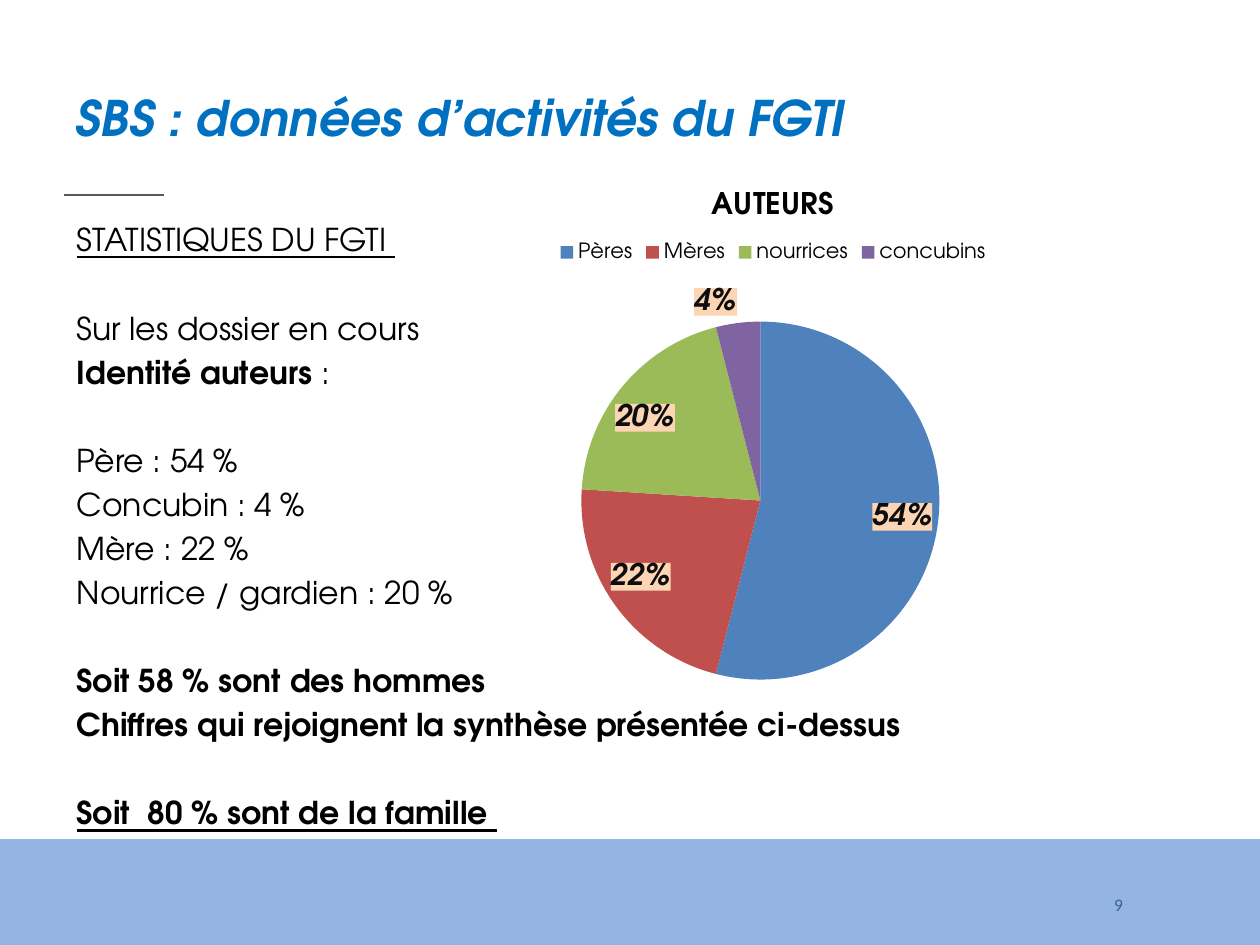
from lxml import etree
from pptx import Presentation
from pptx.chart.data import CategoryChartData
from pptx.dml.color import RGBColor
from pptx.enum.chart import XL_CHART_TYPE, XL_LABEL_POSITION, XL_LEGEND_POSITION
from pptx.enum.shapes import MSO_CONNECTOR, MSO_SHAPE
from pptx.enum.text import MSO_ANCHOR, PP_ALIGN
from pptx.oxml import parse_xml
from pptx.oxml.ns import nsdecls, qn
from pptx.util import Inches, Pt

PIE, STRAIGHT, RECTANGLE = XL_CHART_TYPE.PIE, MSO_CONNECTOR.STRAIGHT, MSO_SHAPE.RECTANGLE
BEST_FIT, LEGEND_TOP = XL_LABEL_POSITION.BEST_FIT, XL_LEGEND_POSITION.TOP
MIDDLE, LEFT, RIGHT = MSO_ANCHOR.MIDDLE, PP_ALIGN.LEFT, PP_ALIGN.RIGHT

BLACK = RGBColor(0x00, 0x00, 0x00)
LABEL_TEXT = RGBColor(0x0D, 0x0D, 0x0D)
LABEL_FILL = RGBColor(0xFC, 0xD5, 0xB5)
TITLE_BLUE = RGBColor(0x00, 0x70, 0xC0)
NUMBER_BLUE = RGBColor(0x37, 0x60, 0x92)
BAND_BLUE = RGBColor(0x94, 0xB4, 0xE3)
RULE_GREY = RGBColor(0x59, 0x59, 0x59)
HEADING_FONT = "TeX Gyre Adventor"

LINE_GAP = 3.6
SECTION_GAP = 28.75  # one empty line plus the usual gap


def format_font(font, color, **values):
    for name, value in values.items():
        setattr(font, name, value)
    font.color.rgb = color


presentation = Presentation()
presentation.slide_width, presentation.slide_height = Inches(10), Inches(7.5)
slide = presentation.slides.add_slide(presentation.slide_layouts[5])

# Footer band and short rule
band = slide.shapes.add_shape(RECTANGLE, Inches(0), Inches(6.66), Inches(10), Inches(0.84))
band.shadow.inherit = False
band.fill.solid()
band.fill.fore_color.rgb = BAND_BLUE
band.line.fill.background()

rule = slide.shapes.add_connector(STRAIGHT, Inches(0.51), Inches(1.55), Inches(1.3), Inches(1.55))
rule.line.color.rgb = RULE_GREY
rule.line.width = Pt(1)
etree.SubElement(rule._element.spPr, qn("a:effectLst"))

# Title
title = slide.shapes.title
title.left, title.top, title.width, title.height = Inches(0.5), Inches(0.3), Inches(9), Inches(1.25)
title.text_frame.text = "SBS : données d’activités du FGTI"
title.text_frame.vertical_anchor = MIDDLE
paragraph = title.text_frame.paragraphs[0]
paragraph.alignment = LEFT
format_font(paragraph.runs[0].font, TITLE_BLUE, name=HEADING_FONT, size=Pt(28), bold=True, italic=True)

# Slide number
number_box = slide.shapes.add_textbox(Inches(6.68), Inches(6.98), Inches(2.33), Inches(0.4))
number_box.text_frame.word_wrap = True
number_box.text_frame.vertical_anchor = MIDDLE
paragraph = number_box.text_frame.paragraphs[0]
paragraph.alignment = RIGHT
run = paragraph.add_run()
run.text = "9"
format_font(run.font, NUMBER_BLUE, name="Calibri", size=Pt(10))

# Statistics: sections of lines, each line a list of (text, format) runs
PLAIN, BOLD = {}, {"bold": True}
sections = [
    [[("STATISTIQUES DU FGTI ", {"underline": True})]],
    [[("Sur les dossier en cours", PLAIN)], [("Identité auteurs ", BOLD), (":", PLAIN)]],
    [
        [("Père : 54 %", PLAIN)],
        [("Concubin : 4 %", PLAIN)],
        [("Mère : 22 %", PLAIN)],
        [("Nourrice / gardien : 20 %", PLAIN)],
    ],
    [
        [("Soit 58 % sont des hommes", BOLD)],
        [("Chiffres qui rejoignent la synthèse présentée ci-dessus", BOLD)],
    ],
    [[("Soit  80 % sont de la famille ", {"bold": True, "underline": True})]],
]
statistics_box = slide.shapes.add_textbox(Inches(0.51), Inches(1.7), Inches(9), Inches(4.95))
text_frame = statistics_box.text_frame
text_frame.word_wrap = True
for section_index, section in enumerate(sections):
    for line_index, line in enumerate(section):
        if section_index == line_index == 0:
            paragraph = text_frame.paragraphs[0]
        else:
            paragraph = text_frame.add_paragraph()
            paragraph.space_before = Pt(LINE_GAP if line_index else SECTION_GAP)
        for text, values in line:
            run = paragraph.add_run()
            run.text = text
            format_font(run.font, BLACK, name=HEADING_FONT, size=Pt(18), **values)

# Pie chart of the authors
slices = [
    ("Pères", 54, RGBColor(0x4F, 0x81, 0xBD)),
    ("Mères", 22, RGBColor(0xC0, 0x50, 0x4D)),
    ("nourrices", 20, RGBColor(0x9B, 0xBB, 0x59)),
    ("concubins", 4, RGBColor(0x80, 0x64, 0xA2)),
]
chart_data = CategoryChartData()
chart_data.categories = [name for name, _, _ in slices]
chart_data.add_series("AUTEURS", [value for _, value, _ in slices])
chart = slide.shapes.add_chart(
    PIE, Inches(2.8), Inches(1.31), Inches(6.67), Inches(4.44), chart_data
).chart
format_font(chart.font, BLACK, name="Calibri", size=Pt(18))

chart.has_title = True
chart.chart_title.include_in_layout = False
chart.chart_title.text_frame.text = "AUTEURS"
title_run = chart.chart_title.text_frame.paragraphs[0].runs[0]
format_font(title_run.font, BLACK, name=HEADING_FONT, size=Pt(17), bold=True)

chart.has_legend = True
chart.legend.position = LEGEND_TOP
chart.legend.include_in_layout = False
format_font(chart.legend.font, BLACK, name=HEADING_FONT, size=Pt(12))

plot = chart.plots[0]
plot.vary_by_categories = True
for index, (_, _, color) in enumerate(slices):
    fill = plot.series[0].points[index].format.fill
    fill.solid()
    fill.fore_color.rgb = color

labels = plot.series[0].data_labels
label_settings = {
    "show_percentage": True,
    "show_value": False,
    "number_format": "0%",
    "number_format_is_linked": False,
    "position": BEST_FIT,
}
for name, value in label_settings.items():
    setattr(labels, name, value)
format_font(labels.font, LABEL_TEXT, name=HEADING_FONT, size=Pt(17), bold=True, italic=True)
labels._element.find(qn("c:numFmt")).addnext(parse_xml(
    f'<c:spPr {nsdecls("c", "a")}><a:solidFill><a:srgbClr val="{LABEL_FILL}"/></a:solidFill></c:spPr>'
))

# Fixed inner plot area, as fractions of the chart
plot_area = chart._chartSpace.chart.plotArea
for old_layout in plot_area.findall(qn("c:layout")):
    plot_area.remove(old_layout)
plot_area.insert(0, parse_xml(
    f'<c:layout {nsdecls("c")}><c:manualLayout><c:layoutTarget val="inner"/>'
    '<c:xMode val="edge"/><c:yMode val="edge"/>'
    '<c:x val="0.07"/><c:y val="0.28"/><c:w val="0.83"/><c:h val="0.64"/>'
    '</c:manualLayout></c:layout>'
))

presentation.save("out.pptx")
